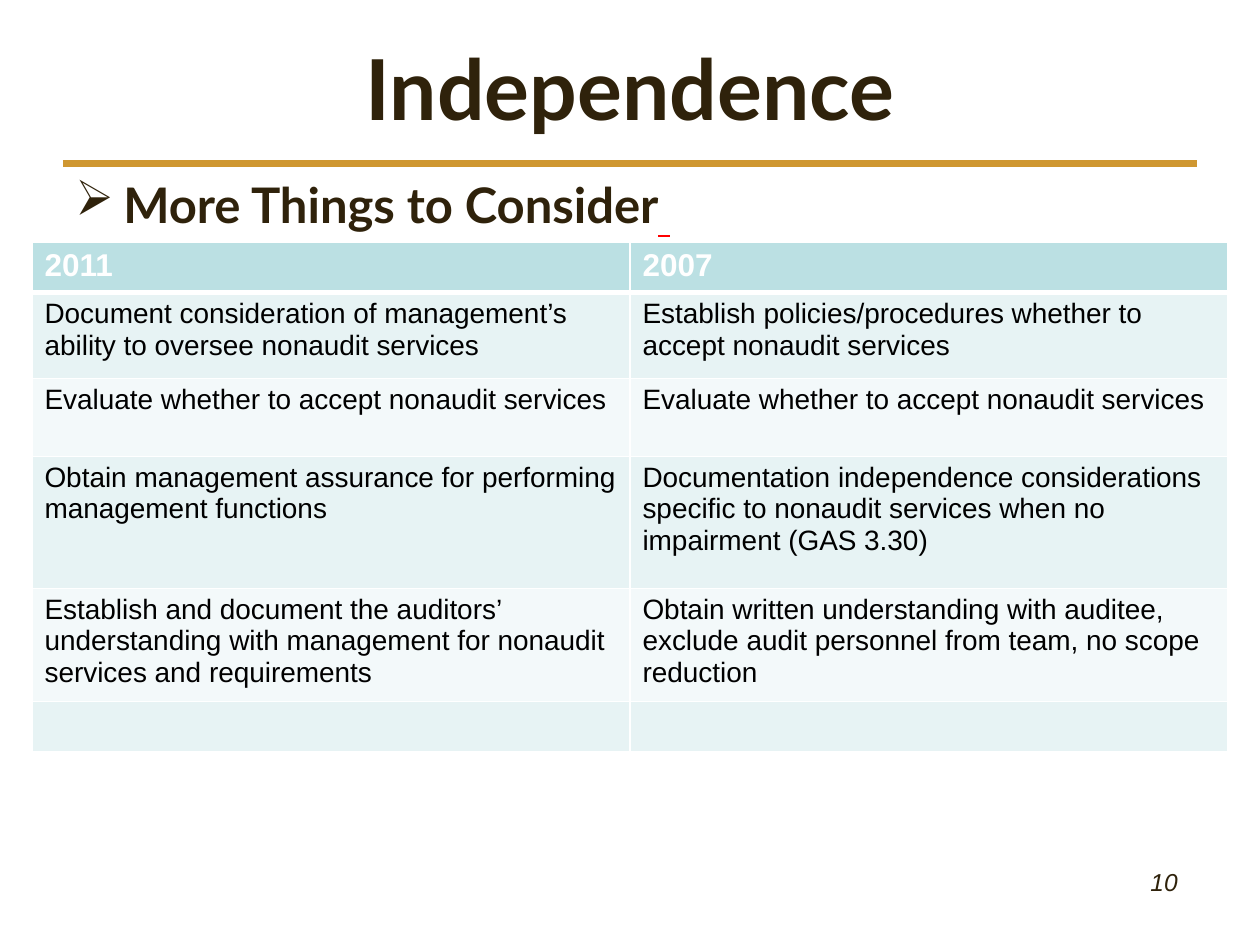
from lxml.etree import SubElement
from pptx import Presentation
from pptx.dml.color import RGBColor
from pptx.enum.shapes import MSO_CONNECTOR
from pptx.enum.text import MSO_ANCHOR, PP_ALIGN
from pptx.oxml.ns import qn
from pptx.util import Pt

PX = 914400 // 126
BROWN, GOLD, WHITE = "2F220B", "CF9731", "FFFFFF"


def color(hex_code):
    return RGBColor.from_string(hex_code)


def add_text(paragraph, text, size=16, font="Arial", ink="000000", bold=False,
             italic=False, underline=False, align=PP_ALIGN.LEFT):
    paragraph.alignment = align
    run = paragraph.add_run()
    run.text = text
    run.font.size = Pt(size)
    run.font.name = font
    run.font.bold = bold
    run.font.italic = italic
    run.font.underline = underline
    run.font.color.rgb = color(ink)


prs = Presentation()
prs.slide_width, prs.slide_height = 1260 * PX, 945 * PX
slide = prs.slides.add_slide(prs.slide_layouts[5])

# Rule under the title
rule = slide.shapes.add_connector(MSO_CONNECTOR.STRAIGHT, 63 * PX, 164 * PX, 1197 * PX, 164 * PX)
rule.line.color.rgb = color(GOLD)
rule.line.width = Pt(4)
SubElement(rule._element.spPr, qn("a:effectLst"))

# Title
title = slide.shapes.title
title.left, title.top, title.width, title.height = 63 * PX, 38 * PX, 1134 * PX, 98 * PX
title.text_frame.vertical_anchor = MSO_ANCHOR.MIDDLE
add_text(title.text_frame.paragraphs[0], "Independence", size=48, font="Lato",
         ink=BROWN, bold=True, align=PP_ALIGN.CENTER)

# Bulleted subheading
subheading = slide.shapes.add_textbox(63 * PX, 168 * PX, 1124 * PX, 655 * PX)
subheading.text_frame.word_wrap = True
topic = subheading.text_frame.paragraphs[0]
indent = topic._p.get_or_add_pPr()
indent.set("marL", str(48 * PX))
indent.set("indent", str(-48 * PX))
SubElement(indent, qn("a:buChar"), char="➢")
add_text(topic, "More Things to Consider", size=28, font="Lato", ink=BROWN, bold=True)
add_text(topic, " ", size=28, font="Lato", ink="FF0000", bold=True, underline=True)

# Page number
page_number = slide.shapes.add_textbox(903 * PX, 861 * PX, 294 * PX, 66 * PX)
page_number.text_frame.word_wrap = True
add_text(page_number.text_frame.paragraphs[0], "10 ", size=14, ink=BROWN,
         italic=True, align=PP_ALIGN.RIGHT)

# Comparison of the two editions
requirements = [
    ("2011", "2007"),
    ("Document consideration of management’s ability to oversee nonaudit services",
     "Establish policies/procedures whether to accept nonaudit services"),
    ("Evaluate whether to accept nonaudit services",
     "Evaluate whether to accept nonaudit services"),
    ("Obtain management assurance for performing management functions",
     "Documentation independence considerations specific to nonaudit services "
     "when no impairment (GAS 3.30)"),
    ("Establish and document the auditors’ understanding with management for "
     "nonaudit services and requirements",
     "Obtain written understanding with auditee, exclude audit personnel from "
     "team, no scope reduction"),
    ("", ""),
]
row_heights = [47, 86, 78, 132, 106, 44]
comparison = slide.shapes.add_table(len(requirements), 2, 32 * PX, 242 * PX,
                                    1196 * PX, sum(row_heights) * PX).table
for column in comparison.columns:
    column.width = 598 * PX

for r, (row_height, entries) in enumerate(zip(row_heights, requirements)):
    comparison.rows[r].height = row_height * PX
    header = r == 0
    band = "BBE0E3" if header else ("F3F9FA", "E7F3F4")[r % 2]
    for c, entry in enumerate(entries):
        cell = comparison.cell(r, c)
        for side in ("lnL", "lnR", "lnT", "lnB"):
            thick = (r, side) in ((0, "lnB"), (1, "lnT"))
            border = SubElement(cell._tc.get_or_add_tcPr(), qn(f"a:{side}"),
                                w=str(Pt(3 if thick else 1)))
            SubElement(SubElement(border, qn("a:solidFill")), qn("a:srgbClr"), val=WHITE)
        cell.fill.solid()
        cell.fill.fore_color.rgb = color(band)
        add_text(cell.text_frame.paragraphs[0], entry, size=18 if header else 16,
                 ink=WHITE if header else "000000", bold=header)

prs.save("out.pptx")
